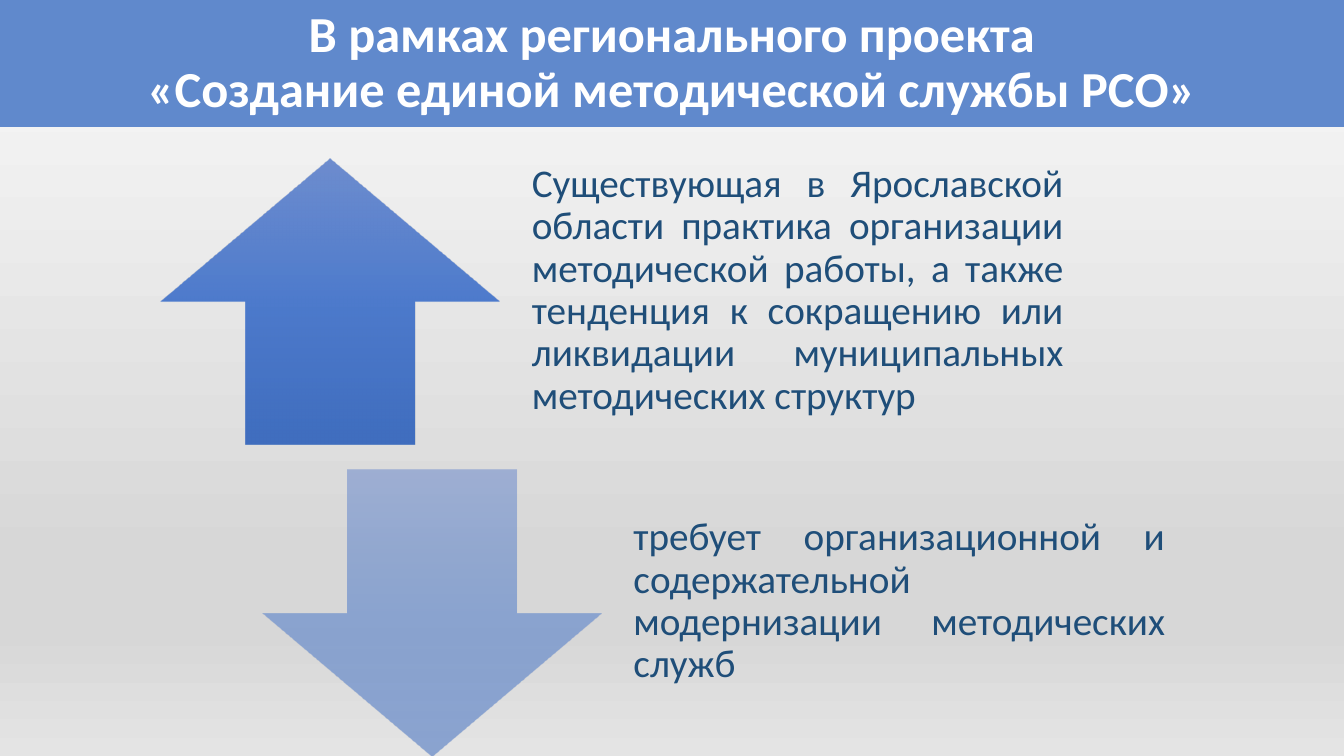
from lxml.etree import SubElement
from pptx import Presentation
from pptx.dml.color import RGBColor
from pptx.enum.shapes import MSO_SHAPE
from pptx.enum.text import MSO_ANCHOR, MSO_AUTO_SIZE, PP_ALIGN
from pptx.oxml.ns import qn
from pptx.util import Pt

COLORS = {"band": "6089CC", "title": "FFFFFF", "body": "1F4E79"}
BACKGROUND_STOPS = [(0, "FAFAFA"), (74, "D7D7D7"), (83, "D7D7D7"), (100, "E4E4E4")]
ARROW_STOPS = [(0, "6183CB"), (50, "3E70CA"), (100, "3062BB")]


def set_gradient(fill, element, stops, opacity=100):
    """Fill downwards with (percent, colour) stops; element is the XML that holds the fill."""
    fill.gradient()
    fill.gradient_angle = 270
    stop_list = element.find(".//" + qn("a:gsLst"))
    for old_stop in list(stop_list):
        stop_list.remove(old_stop)
    for position, color in stops:
        stop = SubElement(stop_list, qn("a:gs"), pos=str(position * 1000))
        tint = SubElement(stop, qn("a:srgbClr"), val=color)
        if opacity < 100:
            SubElement(tint, qn("a:alpha"), val=str(opacity * 1000))


def write_text(box, text, size, color, align, bold=False, margins=(7.2, 3.6, 7.2, 3.6)):
    frame = box.text_frame
    frame.word_wrap = True
    frame.auto_size = MSO_AUTO_SIZE.NONE
    frame.vertical_anchor = MSO_ANCHOR.MIDDLE
    frame.margin_left, frame.margin_top, frame.margin_right, frame.margin_bottom = map(Pt, margins)
    frame.text = text
    for para in frame.paragraphs:
        para.alignment = align
        para.line_spacing = 0.9
        para.space_before = Pt(0)
        for span in para.runs:
            span.font.name = "Calibri"
            span.font.size = Pt(size)
            span.font.bold = bold
            span.font.color.rgb = RGBColor.from_string(COLORS[color])


deck = Presentation()
deck.slide_width, deck.slide_height = Pt(960), Pt(540)
page = deck.slides.add_slide(deck.slide_layouts[5])
set_gradient(page.background.fill, page.element, BACKGROUND_STOPS)

title = page.shapes.title
title.left, title.top, title.width, title.height = Pt(0), Pt(0), Pt(960), Pt(90.7)
title.fill.solid()
title.fill.fore_color.rgb = RGBColor.from_string(COLORS["band"])
write_text(title, "В рамках регионального проекта\n«Создание единой методической службы РСО»",
           size=36, color="title", align=PP_ALIGN.CENTER, bold=True)

ARROW_WIDTH, ROW_HEIGHT = 242, 204.8
TEXT_OFFSET, TEXT_WIDTH = 249.5, 411
rows = [
    (MSO_SHAPE.UP_ARROW, 114.7, 113, 90,
     "Существующая в Ярославской области практика организации методической работы, "
     "а также тенденция к сокращению или ликвидации муниципальных методических структур"),
    (MSO_SHAPE.DOWN_ARROW, 187.3, 335.2, 50,
     "требует организационной и содержательной модернизации методических служб"),
]
for arrow_kind, left, top, opacity, text in rows:
    arrow = page.shapes.add_shape(arrow_kind, Pt(left), Pt(top), Pt(ARROW_WIDTH), Pt(ROW_HEIGHT))
    arrow.shadow.inherit = False
    arrow.line.fill.background()
    set_gradient(arrow.fill, arrow.element, ARROW_STOPS, opacity)

    box = page.shapes.add_textbox(Pt(left + TEXT_OFFSET), Pt(top), Pt(TEXT_WIDTH), Pt(ROW_HEIGHT))
    write_text(box, text, size=28, color="body", align=PP_ALIGN.JUSTIFY,
               margins=(15.7, 0, 15.7, 15.7))

deck.save("out.pptx")
